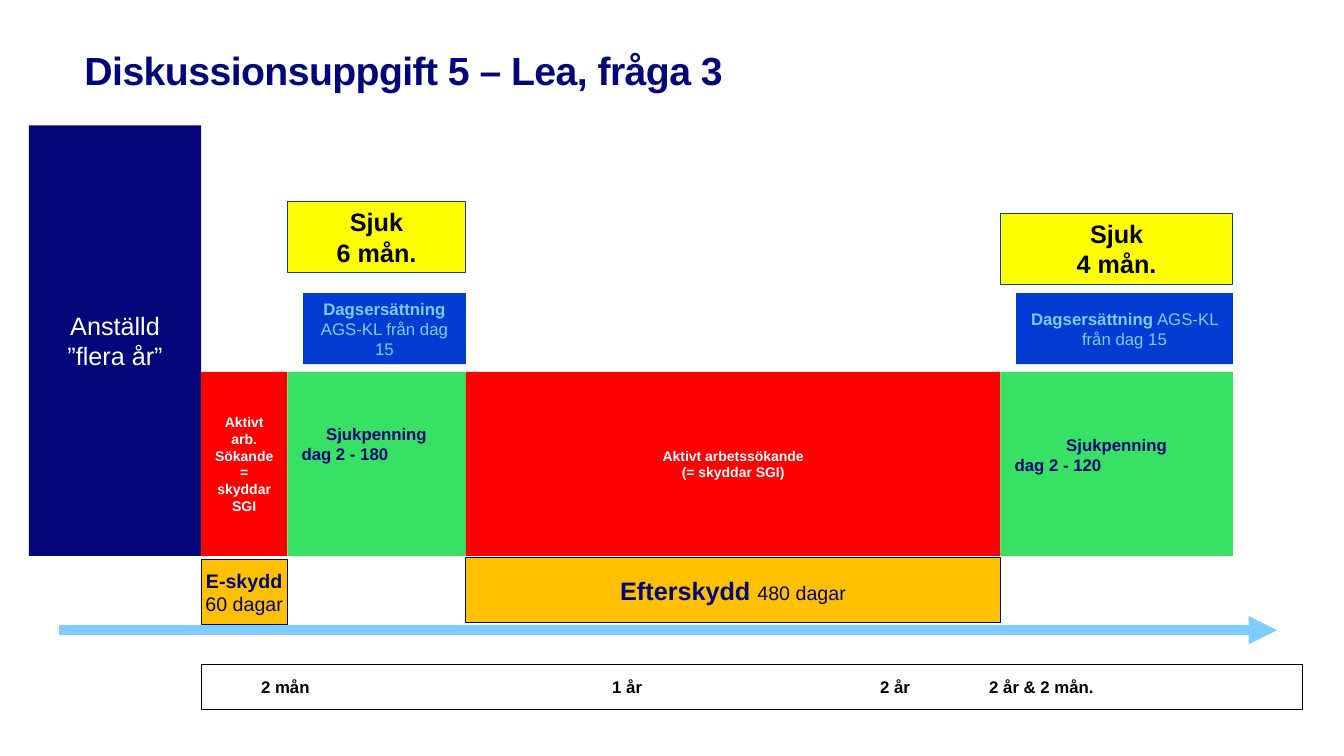
from pptx import Presentation
from pptx import util as u
from pptx.dml.color import RGBColor
from pptx.enum import shapes, text
from pptx.oxml import parse_xml
from pptx.oxml.ns import nsdecls

NAVY, BLUE, SKY = "020678", "003CD2", "7DCDFF"
RED, GREEN, GOLD, YELLOW = "FF0000", "37E164", "FFC000", "FFFF00"
WHITE, BLACK = "FFFFFF", "000000"
LEFT, MID = text.PP_ALIGN.LEFT, text.PP_ALIGN.CENTER
TOP, HIGH = 9.37, 4.64


def color(code):
    return RGBColor.from_string(code)


def style(para, size, code, bold, align):
    para.alignment = align
    font = para.font
    font.name, font.size, font.bold = "Arial", u.Pt(size), bold
    font.color.rgb = color(code)


def frame(shape, pad):
    body = shape.text_frame
    body.word_wrap = True
    body.vertical_anchor = text.MSO_ANCHOR.MIDDLE
    body.margin_left = body.margin_right = u.Cm(pad)
    body.margin_top = body.margin_bottom = u.Cm(pad / 2)
    return body


def block(slide, box, fill, edge=None, pad=0):
    shape = slide.shapes.add_shape(shapes.MSO_SHAPE.RECTANGLE, *map(u.Cm, box))
    shape.shadow.inherit = False
    if fill:
        shape.fill.solid()
        shape.fill.fore_color.rgb = color(fill)
    else:
        shape.fill.background()
    if edge:
        shape.line.color.rgb = color(edge)
        shape.line.width = u.Pt(0.75)
    else:
        shape.line.fill.background()
    return frame(shape, pad)


def label(slide, box):
    return frame(slide.shapes.add_textbox(*map(u.Cm, box)), 0)


def write(body, lines, size, code, bold=True, aligns=None):
    for i, line in enumerate(lines):
        para = body.paragraphs[0] if i == 0 else body.add_paragraph()
        para.text = line
        style(para, size, code, bold, aligns[i] if aligns else MID)


def mixed(body, head, tail, code, big, small):
    para = body.paragraphs[0]
    style(para, small, code, False, MID)
    for words, bold, size in ((head, True, big), (tail, False, small)):
        run = para.add_run()
        run.text = words
        run.font.bold, run.font.size = bold, u.Pt(size)


def title(slide, box, words):
    body = label(slide, box)
    write(body, [words], 28, NAVY, aligns=[LEFT])
    body.paragraphs[0].runs[0]._r.get_or_add_rPr().set("spc", "-40")


def job(slide, box):
    write(block(slide, box, NAVY, pad=0.25), ["Anställd ”flera år”"], 18, WHITE, False)


def sick(slide, box, months, days, rise, lift):
    x, y, w, h = box
    pay = block(slide, box, GREEN, pad=0.36)
    pay.margin_bottom = u.Cm(lift)
    write(pay, ["Sjukpenning", f"dag 2 - {days}"], 12, NAVY, aligns=[MID, LEFT])
    write(block(slide, (x, y - rise, w, 1.78), YELLOW, BLUE),
          ["Sjuk", f"{months} mån."], 18, BLACK)
    daily = block(slide, (x + 0.4, y - 1.98, w - 0.4, 1.79), BLUE, pad=0.25)
    mixed(daily, "Dagsersättning", " AGS-KL från dag 15", SKY, 12, 12)


def seek(slide, box, lines, gap):
    x, y, w, h = box
    write(block(slide, box, RED), lines, 10, WHITE)
    return block(slide, (x, y + h + gap, w, 1.65), GOLD, NAVY)


def axis(slide, x, y, w):
    line = slide.shapes.add_connector(
        shapes.MSO_CONNECTOR.STRAIGHT, *map(u.Cm, (x, y, x + w, y)))
    line.line.color.rgb = color(SKY)
    line.line.width = u.Pt(6.75)
    line.line._get_or_add_ln().append(
        parse_xml(f'<a:tailEnd {nsdecls("a")} type="triangle"/>'))
    line._element.spPr.append(parse_xml(f'<a:effectLst {nsdecls("a")}/>'))


def scale(slide, box, marks):
    x, y, w, h = box
    block(slide, box, None, BLACK)
    for words, spot, wide in marks:
        write(label(slide, (x + spot, y, wide, h)), [words], 12, BLACK, aligns=[LEFT])


def main():
    deck = Presentation()
    deck.slide_width, deck.slide_height = u.Cm(33.87), u.Cm(19.05)
    slide = deck.slides.add_slide(deck.slide_layouts[6])
    edges = [5.07, 7.24, 11.74, 25.21, 31.07]
    first, ill, second, last = [
        (a, TOP, b - a, HIGH) for a, b in zip(edges, edges[1:])]

    title(slide, (2.13, 1.02, 27.15, 1.47), "Diskussionsuppgift 5 – Lea, fråga 3")
    axis(slide, 1.48, 15.88, 30.7)
    job(slide, (0.73, 3.16, 4.34, 10.85))
    short = seek(slide, first,
                 ["Aktivt", "arb.", "Sökande", "=", "skyddar", "SGI"], 0.09)
    write(short, ["E-skydd", "60 dagar"], 14, NAVY)
    short.paragraphs[1].font.bold = False
    sick(slide, ill, 6, 180, 4.29, 1.2)
    after = seek(slide, second, ["Aktivt arbetssökande", "(= skyddar SGI)"], 0.04)
    mixed(after, "Efterskydd ", "480 dagar", NAVY, 18, 14)
    sick(slide, last, 4, 120, 3.99, 0.65)
    scale(slide, (5.07, 16.74, 27.76, 1.14),
          [("2 mån", 1.51, 2), ("1 år", 10.36, 2),
           ("2 år", 17.11, 2), ("2 år & 2 mån.", 19.86, 4)])
    deck.save("out.pptx")


if __name__ == "__main__":
    main()
